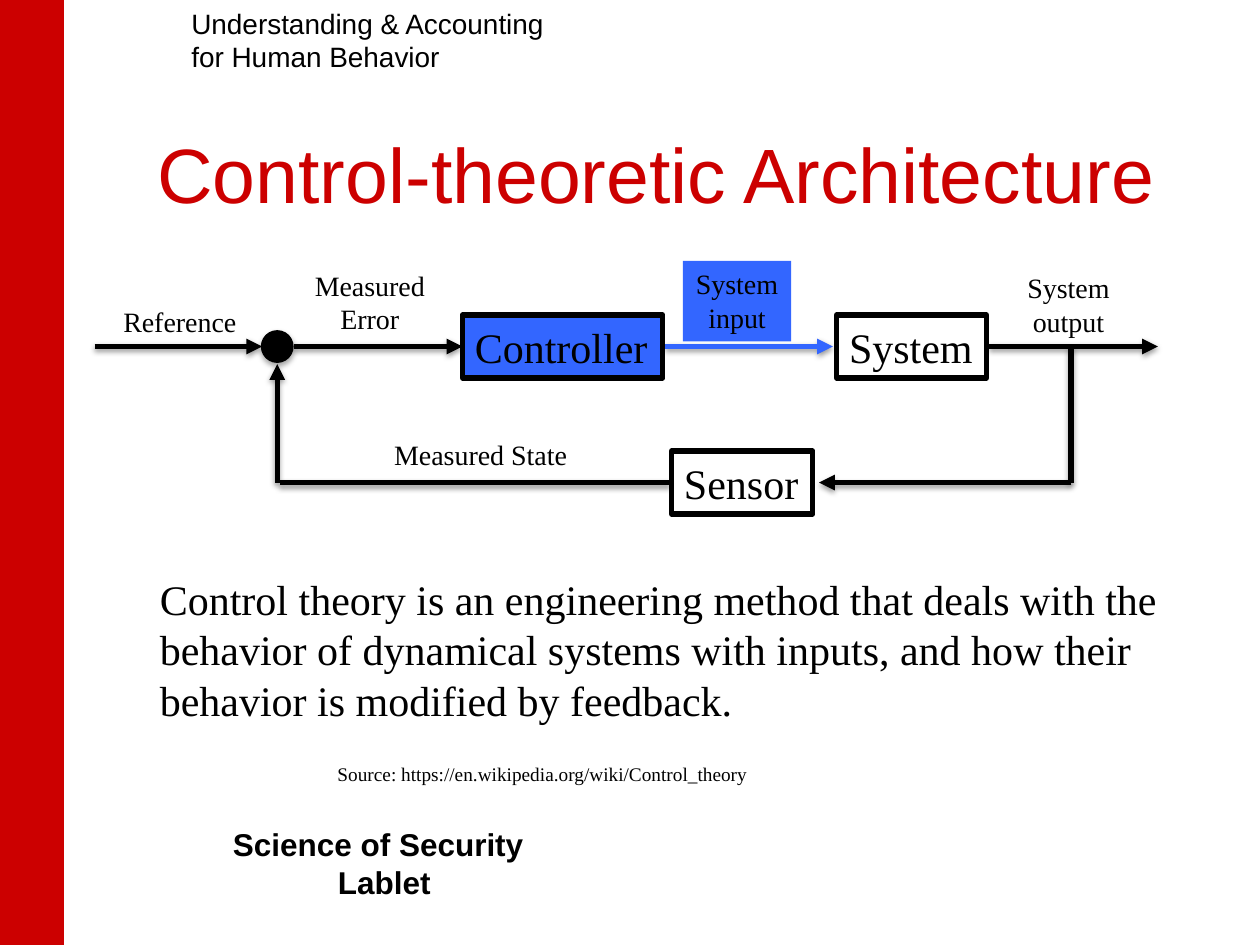
from dataclasses import dataclass

from lxml.etree import SubElement
from pptx import Presentation
from pptx.dml.color import RGBColor as RGB
from pptx.enum.shapes import MSO_CONNECTOR as CONN, MSO_SHAPE as SHAPE
from pptx.enum.text import MSO_ANCHOR as ANCHOR, MSO_AUTO_SIZE as AUTO, PP_ALIGN as ALIGN
from pptx.oxml.ns import qn
from pptx.util import Inches, Pt


@dataclass(frozen=True)
class Theme:
    red: str = "CC0000"
    blue: str = "3366FF"
    black: str = "000000"
    sans: str = "Arial"
    serif: str = "Times New Roman"
    title: int = 44
    body: int = 24
    footer: int = 18
    label: int = 16
    source: int = 11
    stroke: int = 3


T = Theme()
L, C = ALIGN.LEFT, ALIGN.CENTER

TOP, BOTTOM = 2.75, 3.83
JOIN, TAP = 2.2, 8.5
DOT, NODE_H = 0.25, 0.5

TITLE = "Control-theoretic Architecture"
NODES = [
    ("Controller", 3.67, TOP, 1.59, T.blue),
    ("System", 6.64, TOP, 1.19, None),
    ("Sensor", 5.33, BOTTOM, 1.12, None),
]
ARROWS = [
    ((0.75, TOP), (2.08, TOP), T.black),
    ((2.33, TOP), (3.67, TOP), T.black),
    ((5.28, TOP), (6.61, TOP), T.blue),
    ((7.85, TOP), (9.19, TOP), T.black),
    ((TAP, BOTTOM), (6.5, BOTTOM), T.black),
    ((JOIN, BOTTOM), (JOIN, 2.89), T.black),
]
PLAIN_LINES = [
    ((TAP, BOTTOM), (TAP, TOP), T.black),
    ((5.31, BOTTOM), (2.22, BOTTOM), T.black),
]
LABELS = [
    (["Reference"], (0.88, 2.37, 1.11, 0.37), L, None),
    (["Measured", "Error"], (2.39, 2.08, 1.09, 0.64), C, None),
    (["System", "input"], (5.42, 2.07, 0.86, 0.64), C, T.blue),
    (["System", "output"], (8.05, 2.1, 0.86, 0.64), C, None),
    (["Measured State"], (3.03, 3.42, 1.59, 0.37), L, None),
]
HEADER = ["Understanding & Accounting", "for Human Behavior"]
FOOTER = ["Science of Security", "Lablet"]
SOURCE = ["Source: https://en.wikipedia.org/wiki/Control_theory"]
BODY = [
    "Control theory is an engineering method that deals with the",
    "behavior of dynamical systems with inputs, and how their",
    "behavior is modified by feedback.",
]


def write(sp, lines, size, font=T.serif, aligns=(L,), color=T.black,
          bold=False, wrap=False, anchor=ANCHOR.TOP, fit=AUTO.SHAPE_TO_FIT_TEXT):
    tf = sp.text_frame
    tf.word_wrap, tf.auto_size, tf.vertical_anchor = wrap, fit, anchor
    for i, line in enumerate(lines):
        p = tf.paragraphs[0] if i == 0 else tf.add_paragraph()
        p.alignment = aligns[min(i, len(aligns) - 1)]
        r = p.add_run()
        r.text = line
        r.font.name, r.font.size, r.font.bold = font, Pt(size), bold
        r.font.color.rgb = RGB.from_string(color)


def paint(sp, fill=None, line=None, width=T.stroke):
    sp.shadow.inherit = False
    if fill:
        sp.fill.solid()
        sp.fill.fore_color.rgb = RGB.from_string(fill)
    else:
        sp.fill.background()
    if line:
        sp.line.color.rgb = RGB.from_string(line)
        sp.line.width = Pt(width)
    else:
        sp.line.fill.background()


def cast_shadow(props, alpha, dist):
    for old in props.findall(qn("a:effectLst")):
        props.remove(old)
    effects = SubElement(props, qn("a:effectLst"))
    shadow = SubElement(effects, qn("a:outerShdw"), blurRad=str(Pt(3.1)),
                        dist=str(Pt(dist)), dir="5400000", rotWithShape="0")
    color = SubElement(shadow, qn("a:srgbClr"), val=T.black)
    SubElement(color, qn("a:alpha"), val=str(alpha * 1000))


def connect(shapes, start, end, color, arrow):
    cx = shapes.add_connector(CONN.STRAIGHT, *map(Inches, start + end))
    cx.line.color.rgb = RGB.from_string(color)
    cx.line.width = Pt(T.stroke)
    if arrow:
        SubElement(cx.line._get_or_add_ln(), qn("a:tailEnd"), type="triangle")
    cast_shadow(cx._element.spPr, 38, 1.6)


def add_box(shapes, at, kind=SHAPE.RECTANGLE, **style):
    sp = shapes.add_shape(kind, *map(Inches, at))
    paint(sp, **style)
    return sp


def add_text(shapes, at, lines, size, **style):
    write(shapes.add_textbox(*map(Inches, at)), lines, size, **style)


def main():
    prs = Presentation()
    prs.slide_width, prs.slide_height = Inches(10), Inches(7.5)
    slide = prs.slides.add_slide(prs.slide_layouts[5])
    shapes = slide.shapes

    title = shapes.title
    title.left, title.top, title.width, title.height = map(Inches, (0.12, 0.83, 10.18, 1.08))
    write(title, [TITLE], T.title, font=T.sans, aligns=(C,), color=T.red,
          wrap=True, anchor=ANCHOR.MIDDLE, fit=AUTO.NONE)

    add_box(shapes, (0, 0, 0.5, 7.5), fill=T.red, line=T.red, width=0.75)
    add_text(shapes, (1.75, 6.5, 2.6, 0.71), FOOTER, T.footer, font=T.sans,
             aligns=(L, C), bold=True, wrap=True)
    add_text(shapes, (1.42, 0, 3.03, 0.64), HEADER, T.label, font=T.sans)
    add_text(shapes, (2.58, 6, 3.48, 0.29), SOURCE, T.source)

    for start, end, color in ARROWS:
        connect(shapes, start, end, color, arrow=True)
    dot = add_box(shapes, (JOIN - DOT / 2, TOP - DOT / 2, DOT, DOT), SHAPE.OVAL,
                  fill=T.black, line=T.black, width=0.75)
    cast_shadow(dot._element.spPr, 35, 1.8)
    for name, left, middle, width, fill in NODES:
        node = add_box(shapes, (left, middle - NODE_H / 2, width, NODE_H),
                       fill=fill, line=T.black)
        write(node, [name], T.body)
    for start, end, color in PLAIN_LINES:
        connect(shapes, start, end, color, arrow=False)

    for lines, at, align, fill in LABELS:
        if fill:
            write(add_box(shapes, at, fill=fill), lines, T.label, aligns=(align,))
        else:
            add_text(shapes, at, lines, T.label, aligns=(align,))
    add_text(shapes, (1.17, 4.5, 8.19, 1.31), BODY, T.body)

    prs.save("out.pptx")


if __name__ == "__main__":
    main()
